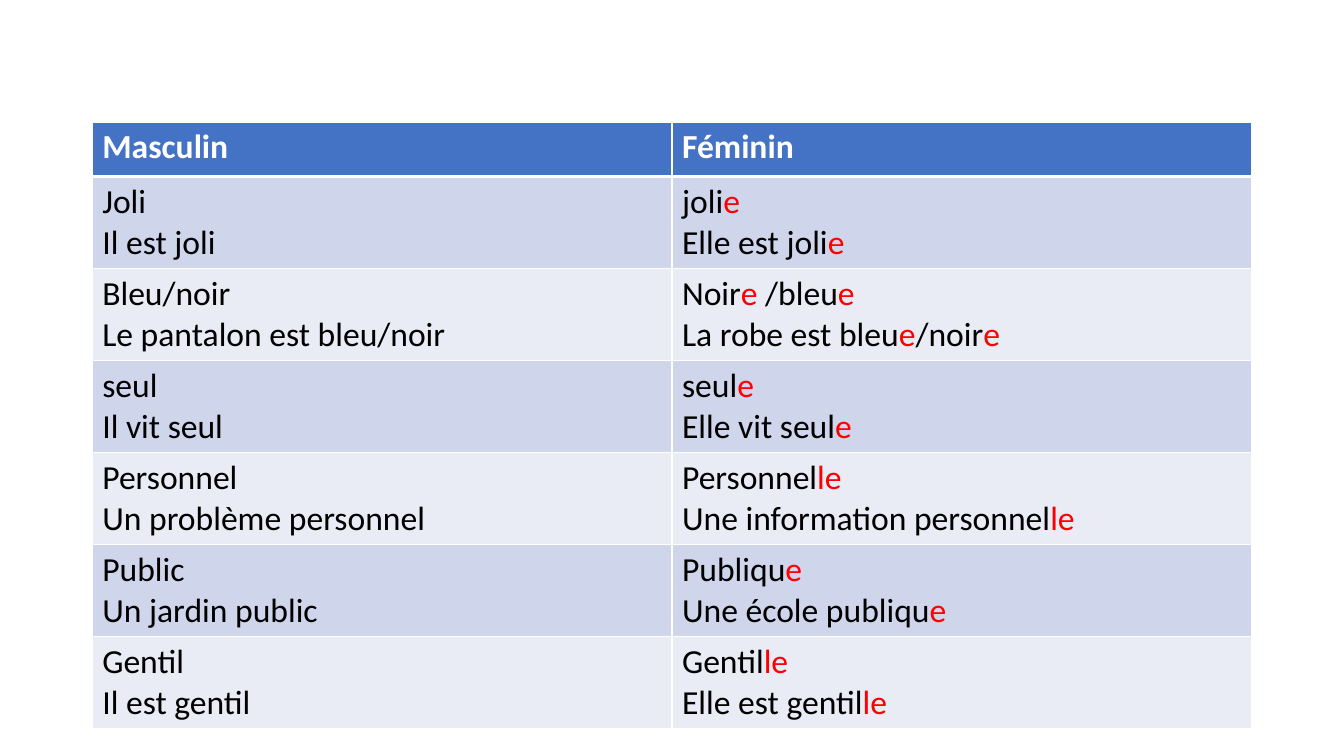
from lxml.etree import SubElement
from pptx import Presentation
from pptx.dml.color import RGBColor
from pptx.oxml.ns import qn
from pptx.util import Inches, Pt

# Text between asterisks is the feminine ending, shown in the accent colour.
HEADER = ("Masculin", "Féminin")
ADJECTIVES = [
    (("Joli", "Il est joli"),
     ("joli*e*", "Elle est joli*e*")),
    (("Bleu/noir", "Le pantalon est bleu/noir"),
     ("Noir*e* /bleu*e*", "La robe est bleu*e*/noir*e*")),
    (("seul", "Il vit seul"),
     ("seul*e*", "Elle vit seul*e*")),
    (("Personnel", "Un problème personnel"),
     ("Personnel*le*", "Une information personnel*le*")),
    (("Public", "Un jardin public"),
     ("Publiqu*e*", "Une école publiqu*e*")),
    (("Gentil", "Il est gentil"),
     ("Gentil*le*", "Elle est gentil*le*")),
]
COLORS = {"header": "4472C4", "odd": "CFD5EA", "even": "E9EBF5",
          "white": "FFFFFF", "text": "000000", "ending": "FF0000"}
FONT = {"name": "Calibri", "size": Pt(24)}
SLIDE_W, SLIDE_H = 13.33, 7.5
TABLE_W, TABLE_TOP = 11.5, 1.21
HEADER_H, ROW_H = 0.54, 0.91


def rgb(name):
    return RGBColor.from_string(COLORS[name])


def set_borders(cell, bottom):
    tcPr = cell._tc.get_or_add_tcPr()
    for side, width in {"L": 1, "R": 1, "T": 1, "B": bottom}.items():
        ln = SubElement(tcPr, qn(f"a:ln{side}"), w=str(Pt(width)))
        fill = SubElement(ln, qn("a:solidFill"))
        SubElement(fill, qn("a:srgbClr"), val=COLORS["white"])


def fill_cell(cell, lines, fill, color, bold=False, bottom=1):
    set_borders(cell, bottom)
    cell.fill.solid()
    cell.fill.fore_color.rgb = rgb(fill)
    tf = cell.text_frame
    for i, line in enumerate(lines):
        p = tf.add_paragraph() if i else tf.paragraphs[0]
        for j, part in enumerate(line.split("*")):
            if part:
                r = p.add_run()
                r.text = part
                for key, value in {**FONT, "bold": bold}.items():
                    setattr(r.font, key, value)
                r.font.color.rgb = rgb("ending" if j % 2 else color)


def main():
    prs = Presentation()
    prs.slide_width, prs.slide_height = Inches(SLIDE_W), Inches(SLIDE_H)
    s = prs.slides.add_slide(prs.slide_layouts[6])

    n = len(ADJECTIVES)
    table = s.shapes.add_table(
        n + 1, len(HEADER), Inches((SLIDE_W - TABLE_W) / 2), Inches(TABLE_TOP),
        Inches(TABLE_W), Inches(HEADER_H + n * ROW_H)).table
    for row, height in zip(table.rows, [HEADER_H] + [ROW_H] * n):
        row.height = Inches(height)

    for col, label in enumerate(HEADER):
        fill_cell(table.cell(0, col), [label], "header", "white", True, 3)
    for row, pair in enumerate(ADJECTIVES, 1):
        for col, lines in enumerate(pair):
            fill_cell(table.cell(row, col), lines,
                      "odd" if row % 2 else "even", "text")
    prs.save("out.pptx")


if __name__ == "__main__":
    main()
